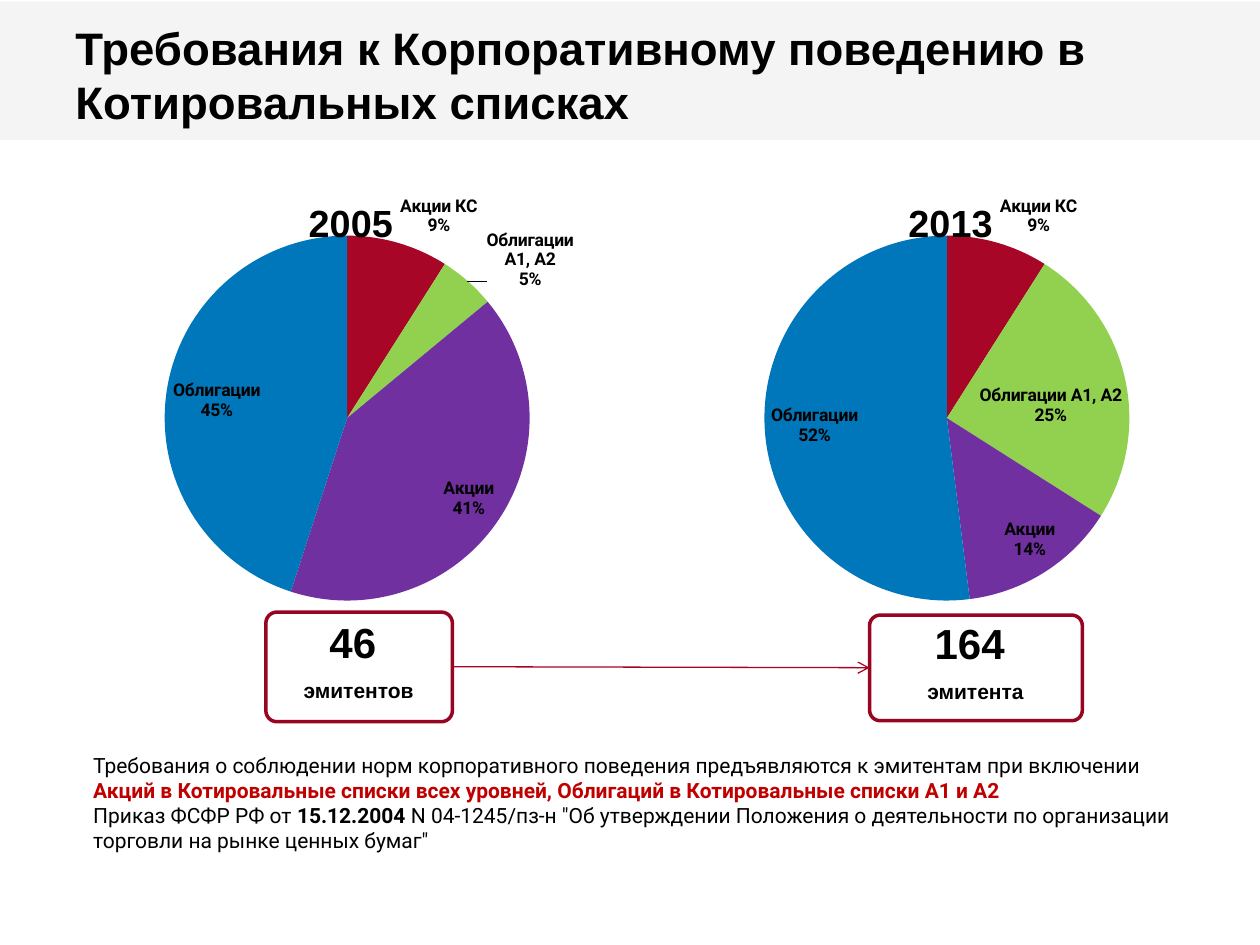
from lxml import etree
from pptx import Presentation
from pptx.chart.data import CategoryChartData
from pptx.dml.color import RGBColor
from pptx.enum import chart as ch, shapes, text
from pptx.oxml import parse_xml
from pptx.oxml.ns import nsdecls, qn
from pptx.util import Cm, Pt

COLORS = {
    "band": "F4F4F4", "black": "000000", "white": "FFFFFF", "frame": "980523",
    "arrow": "A80224", "accent": "C00000", "listed": "A80627",
    "bonds_a": "92D050", "shares": "7030A0", "bonds": "0077BB",
}
SLICES = ["listed", "bonds_a", "shares", "bonds"]
CATEGORIES = ["Акции КС", "Облигации А1, А2", "Акции", "Облигации"]


def add_run(p, words, size, name="Arial", bold=True, color="black"):
    r = p.add_run()
    r.text = words
    r.font.size = Pt(size)
    r.font.name = name
    r.font.bold = bold
    r.font.color.rgb = RGBColor.from_string(COLORS[color])


def set_layout(parent, before, x, y, w=None, h=None):
    for old in parent.findall(qn("c:layout")):
        parent.remove(old)
    inner = '<c:layoutTarget val="inner"/>' if w else ""
    inner += '<c:xMode val="edge"/><c:yMode val="edge"/>'
    for tag, value in zip("xywh", (x, y, w, h)):
        if value is not None:
            inner += f'<c:{tag} val="{value}"/>'
    layout = parse_xml(
        f'<c:layout {nsdecls("c")}><c:manualLayout>{inner}</c:manualLayout></c:layout>')
    parent.find(qn(before)).addprevious(layout)


prs = Presentation()
prs.slide_width, prs.slide_height = Cm(25.4), Cm(19.05)
s = prs.slides.add_slide(prs.slide_layouts[6])

band = s.shapes.add_shape(
    shapes.MSO_SHAPE.RECTANGLE, Cm(0), Cm(0.03), Cm(25.4), Cm(2.79))
band.shadow.inherit = False
band.fill.solid()
band.fill.fore_color.rgb = RGBColor.from_string(COLORS["band"])
band.line.fill.background()

tf = s.shapes.add_textbox(Cm(1.27), Cm(0.41), Cm(22.86), Cm(2.18)).text_frame
tf.word_wrap = True
tf.vertical_anchor = text.MSO_ANCHOR.MIDDLE
add_run(tf.paragraphs[0],
        "Требования к Корпоративному поведению в Котировальных списках", 26)

for left, top, width, height, count, noun in [
    (5.36, 12.34, 3.76, 2.21, "46 ", "эмитентов"),
    (17.53, 12.4, 4.29, 2.13, "164 ", "эмитента"),
]:
    sp = s.shapes.add_shape(shapes.MSO_SHAPE.ROUNDED_RECTANGLE,
                            Cm(left), Cm(top), Cm(width), Cm(height))
    sp.shadow.inherit = False
    sp.adjustments[0] = 0.1
    sp.fill.solid()
    sp.fill.fore_color.rgb = RGBColor.from_string(COLORS["white"])
    sp.line.color.rgb = RGBColor.from_string(COLORS["frame"])
    sp.line.width = Pt(2)
    tf = s.shapes.add_textbox(Cm(left + 0.06), Cm(top + 0.06),
                              Cm(width - 0.14), Cm(height - 0.4)).text_frame
    tf.word_wrap = True
    tf.vertical_anchor = text.MSO_ANCHOR.MIDDLE
    tf.margin_left = tf.margin_right = tf.margin_top = tf.margin_bottom = Cm(0.03)
    for p, words, size in [(tf.paragraphs[0], count, 24),
                           (tf.add_paragraph(), noun, 12)]:
        p.alignment = text.PP_ALIGN.CENTER
        p.space_after = Pt(6)
        add_run(p, words, size)

arrow = s.shapes.add_connector(
    shapes.MSO_CONNECTOR.STRAIGHT, Cm(9.12), Cm(13.44), Cm(17.53), Cm(13.46))
arrow.line.color.rgb = RGBColor.from_string(COLORS["arrow"])
arrow.line.width = Pt(0.75)
etree.SubElement(arrow.line._get_or_add_ln(), qn("a:tailEnd"), type="arrow")
etree.SubElement(arrow._element.spPr, qn("a:effectLst"))

tf = s.shapes.add_textbox(Cm(1.63), Cm(15.04), Cm(22.76), Cm(2.31)).text_frame
tf.word_wrap = True
for i, runs in enumerate([
    [("Требования о соблюдении норм корпоративного поведения предъявляются "
      "к эмитентам при включении", False, "black")],
    [("Акций в Котировальные списки всех уровней, Облигаций в Котировальные "
      "списки А1 и А2", True, "accent")],
    [("Приказ ФСФР РФ от ", False, "black"),
     ("15.12.2004 ", True, "black"),
     ("N 04-1245/пз-н \"Об утверждении Положения о деятельности по организации "
      "торговли на рынке ценных бумаг\"", False, "black")],
]):
    p = tf.add_paragraph() if i else tf.paragraphs[0]
    for words, bold, color in runs:
        add_run(p, words, 12, "Roboto", bold, color)

for left, year, series_name, values in [
    (1.27, "2005", "Series 1", (9, 5, 41, 45)),
    (13.36, "2013", "2013", (9, 25, 14, 52)),
]:
    data = CategoryChartData()
    data.categories = CATEGORIES
    data.add_series(series_name, values)
    chart = s.shapes.add_chart(ch.XL_CHART_TYPE.PIE, Cm(left), Cm(3.35),
                               Cm(11.46), Cm(8.76), data).chart
    chart.font.size = Pt(18)
    chart.font.name = "Arial"
    chart.font.color.rgb = RGBColor.from_string(COLORS["black"])
    chart.has_legend = False
    chart.has_title = True
    add_run(chart.chart_title.text_frame.paragraphs[0], year, 21.6)
    chart.chart_title.include_in_layout = True
    set_layout(chart.chart_title._element, "c:overlay", 0.42, 0.06)
    plot = chart.plots[0]
    plot.vary_by_categories = True
    set_layout(chart._chartSpace.chart.plotArea, "c:pieChart",
               0.16, 0.16, 0.68, 0.84)
    for i, color in enumerate(SLICES):
        fill = plot.series[0].points[i].format.fill
        fill.solid()
        fill.fore_color.rgb = RGBColor.from_string(COLORS[color])
    labels = plot.series[0].data_labels
    labels.show_percentage = True
    labels.show_category_name = True
    labels.show_value = False
    labels.number_format = "0%"
    labels.number_format_is_linked = False
    labels.position = ch.XL_LABEL_POSITION.BEST_FIT
    labels.font.size = Pt(10)
    labels.font.bold = True
    labels.font.name = "Roboto"
    labels.font.color.rgb = RGBColor.from_string(COLORS["black"])
    separator = parse_xml(f'<c:separator {nsdecls("c")}>\n</c:separator>')
    labels._element.find(qn("c:showBubbleSize")).addnext(separator)

prs.save("out.pptx")
